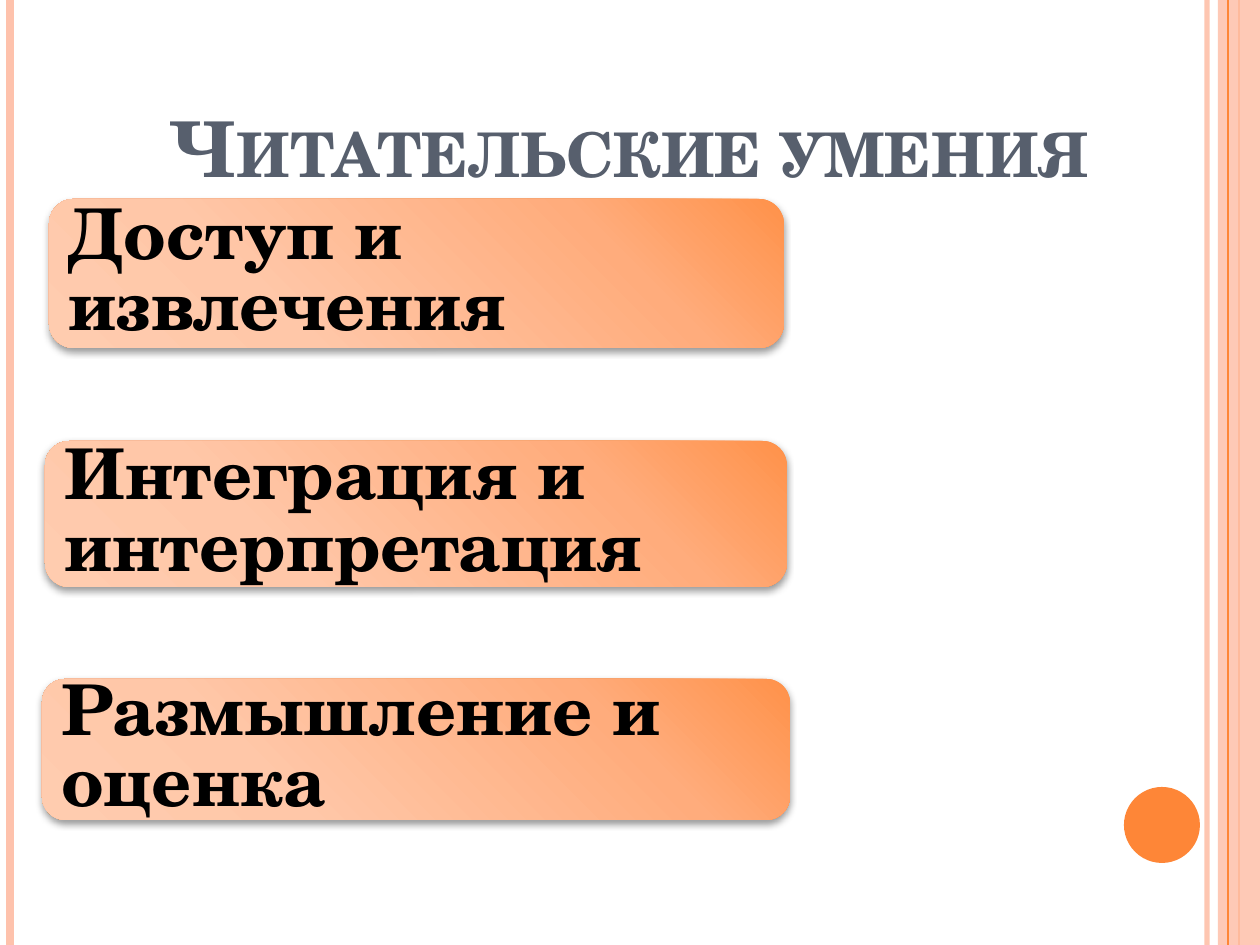
"""Build a slide that lists three reading skills."""
import pptx
import pptx.dml.color
import pptx.enum.shapes
import pptx.enum.text
import pptx.oxml
import pptx.oxml.ns
import pptx.util

SCALE = 914400 // 126
WIDE, HIGH = 1260, 945
FONT = "TeX Gyre Schola"
PINK, ORANGE = "FEC2AC", "FE8637"
STOPS = [(0, "FFCCAF"), (30, "FFC7A8"), (75, "FFAC7C"), (100, "FF924A")]
RULES = [(1207, PINK, 3, 93), (10, PINK, 4.5, 100), (1239, ORANGE, 1.5, 100)]
SKILLS = [
    ("Доступ и извлечения", 49, 199, 735, 149),
    ("Интеграция и интерпретация", 45, 441, 742, 146),
    ("Размышление и оценка", 42, 679, 748, 141),
]
KIND = pptx.enum.shapes.MSO_SHAPE
ALIGN = pptx.enum.text.PP_ALIGN
ANCHOR = pptx.enum.text.MSO_ANCHOR


def px(*nums):
    return [pptx.util.Emu(num * SCALE) for num in nums]


def color(code):
    return pptx.dml.color.RGBColor.from_string(code)


def node(text):
    space = pptx.oxml.ns.nsdecls("a")
    return pptx.oxml.parse_xml(text.replace(">", f" {space}>", 1))


def fade(item, alpha):
    for tint in item.iter(pptx.oxml.ns.qn("a:srgbClr")):
        tint.append(node(f'<a:alpha val="{alpha * 1000}"></a:alpha>'))


def rule(slide, left, code, width, alpha=100):
    kind = pptx.enum.shapes.MSO_CONNECTOR.STRAIGHT
    line = slide.shapes.add_connector(kind, *px(left, 0, left, HIGH))
    line.line.color.rgb = color(code)
    line.line.width = pptx.util.Pt(width)
    part = line._element.spPr
    if alpha < 100:
        fade(part, alpha)
    part.append(node("<a:effectLst></a:effectLst>"))


def shape(slide, kind, box, code=None):
    item = slide.shapes.add_shape(kind, *px(*box))
    item.shadow.inherit = False
    item.line.fill.background()
    if code:
        item.fill.solid()
        item.fill.fore_color.rgb = color(code)
    return item


def write(item, text, size, code, align=ALIGN.LEFT, anchor=ANCHOR.MIDDLE,
          space=1.0, caps=False):
    frame = item.text_frame
    frame.word_wrap = True
    frame.vertical_anchor = anchor
    para = frame.paragraphs[0]
    para.alignment = align
    para.line_spacing = space
    run = para.add_run()
    run.text = text
    font = run.font
    font.name, font.size, font.bold = FONT, pptx.util.Pt(size), True
    font.color.rgb = color(code)
    if caps:
        run._r.get_or_add_rPr().set("cap", "small")


def glow(part):
    """Fill with a radial blend from the lower left and drop a soft shadow."""
    stops = "".join(
        f'<a:gs pos="{at * 1000}"><a:srgbClr val="{code}"/></a:gs>'
        for at, code in STOPS)
    part.insert(2, node(
        f'<a:gradFill rotWithShape="1"><a:gsLst>{stops}</a:gsLst>'
        '<a:path path="circle"><a:fillToRect t="100000" r="100000"/></a:path>'
        '</a:gradFill>'))
    blur, dist = pptx.util.Pt(4), pptx.util.Pt(2)
    part.find(pptx.oxml.ns.qn("a:effectLst")).append(node(
        f'<a:outerShdw blurRad="{blur}" dist="{dist}" dir="5400000" '
        'rotWithShape="0"><a:srgbClr val="000000"><a:alpha val="40000"/>'
        '</a:srgbClr></a:outerShdw>'))


def card(slide, text, *box):
    item = shape(slide, KIND.ROUNDED_RECTANGLE, box)
    item.adjustments[0] = 0.167
    glow(item._element.spPr)
    write(item, text, 40, "000000", space=0.85)


def frame(slide):
    for row in RULES:
        rule(slide, *row)
    band = shape(slide, KIND.RECTANGLE, (1218, 0, WIDE - 1218, HIGH), PINK)
    fade(band._element.spPr, 87)
    rule(slide, 1228, ORANGE, 0.75)
    shape(slide, KIND.OVAL, (1124, 787, 76, 76), ORANGE)


def main():
    deck = pptx.Presentation()
    deck.slide_width, deck.slide_height = px(WIDE, HIGH)
    slide = deck.slides.add_slide(deck.slide_layouts[6])
    frame(slide)
    title = slide.shapes.add_textbox(*px(63, 38, 1134, 161))
    write(title, "Читательские умения", 44, "575F6D", align=ALIGN.CENTER,
          anchor=ANCHOR.BOTTOM, caps=True)
    for skill in SKILLS:
        card(slide, *skill)
    deck.save("out.pptx")


if __name__ == "__main__":
    main()
